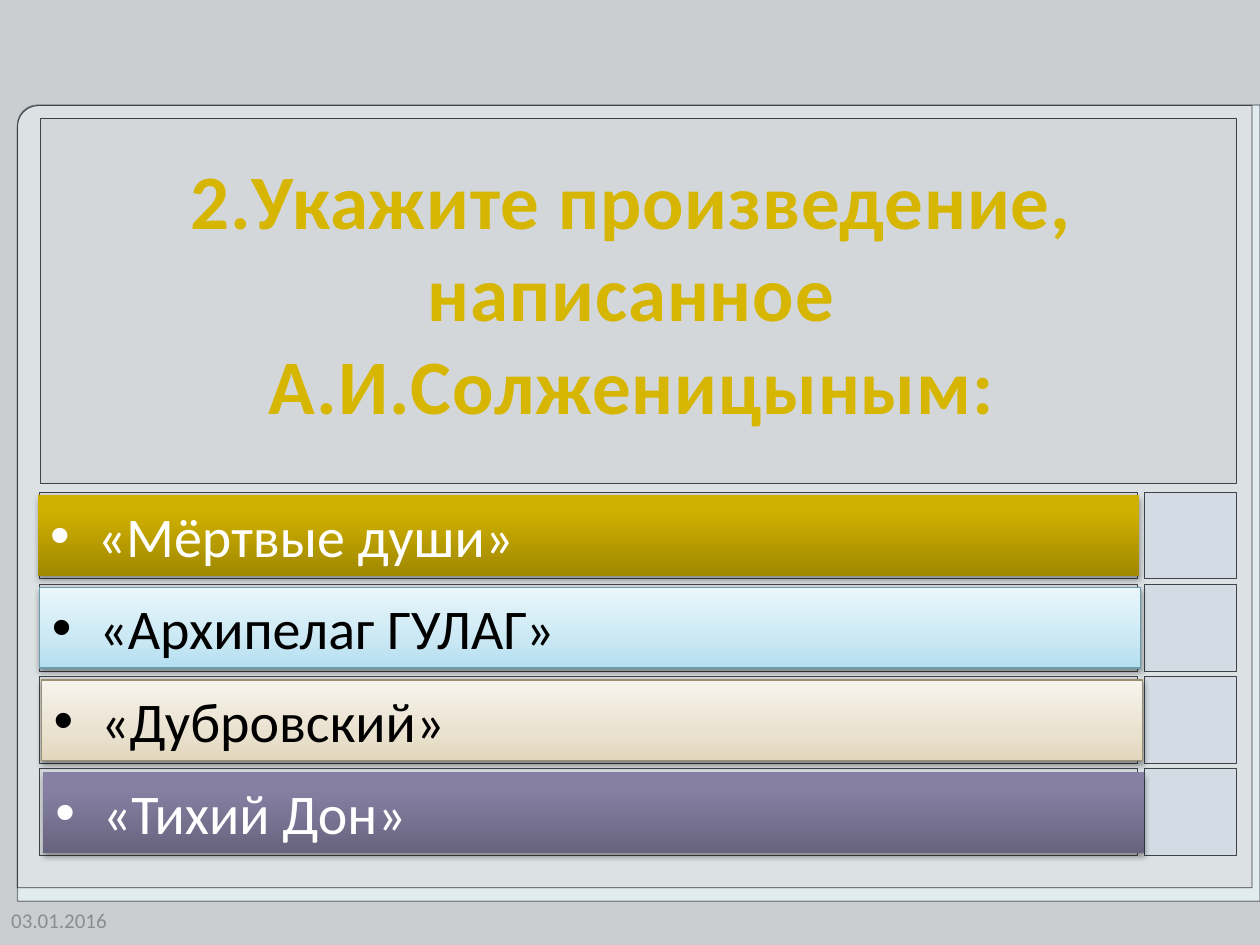
from lxml import etree
from pptx import Presentation
from pptx.dml.color import RGBColor
from pptx.enum import shapes, text
from pptx.oxml import ns
from pptx.util import Pt

COLORS = {
    "bg": "CBCED1", "frame": "E2ECEF", "frame_line": "7E848D",
    "panel": "D8D8D8", "line": "3F4247", "mark": "CCD8E7",
    "title": "D6B600", "date": "8C8C8C", "white": "FFFFFF", "black": "000000",
    "blue_line": "6A9DAE", "sand_line": "9C8F6F",
}
TITLE = "2.Укажите произведение, написанное А.И.Солженицыным:"
DATE = "03.01.2016"
GOLD = [(0, "A08800"), (80, "CFB000"), (100, "D0B100")]
BLUE = [(0, "B4DFF0"), (35, "CAE8F4"), (100, "EAF6FB")]
SAND = [(0, "E2D7BD"), (35, "EAE2D0"), (100, "F7F4ED")]
VIOLET = [(0, "67637D"), (80, "8681A3"), (100, "8681A4")]
ANSWERS = [
    ("«Мёртвые души»", GOLD, None, "white"),
    ("«Архипелаг ГУЛАГ»", BLUE, "blue_line", "black"),
    ("«Дубровский»", SAND, "sand_line", "black"),
    ("«Тихий Дон»", VIOLET, None, "white"),
]
ROW_TOP, ROW_STEP, ROW_HEIGHT = 281.2, 52.7, 49.6
BAR_LEFT, BAR_TOP, BAR_STEP = 21.6, 283, 52.8
BULLET_INDENT = 27


def rgb(name):
    return RGBColor.from_string(COLORS[name])


def add_child(parent, tag, **attrs):
    return etree.SubElement(parent, ns.qn(tag), attrs)


def add_box(slide, box, fill, line=None, width=0.5, alpha=None, radius=None):
    kind = shapes.MSO_SHAPE.RECTANGLE if radius is None else shapes.MSO_SHAPE.ROUND_1_RECTANGLE
    sp = slide.shapes.add_shape(kind, *map(Pt, box))
    sp.shadow.inherit = False
    if radius is not None:
        sp.adjustments[0] = radius
        sp._element.spPr.xfrm.set("flipH", "1")
    if isinstance(fill, list):
        set_gradient(sp, fill)
    else:
        sp.fill.solid()
        sp.fill.fore_color.rgb = rgb(fill)
        if alpha:
            color = sp._element.spPr.find(".//" + ns.qn("a:srgbClr"))
            add_child(color, "a:alpha", val=str(alpha * 1000))
    if line:
        sp.line.color.rgb = rgb(line)
        sp.line.width = Pt(width)
    else:
        sp.line.fill.background()
    return sp


def set_gradient(sp, stops):
    sp.fill.gradient()
    grad = sp._element.spPr.find(ns.qn("a:gradFill"))
    for child in list(grad):
        grad.remove(child)
    gs_list = add_child(grad, "a:gsLst")
    for pos, color in stops:
        gs = add_child(gs_list, "a:gs", pos=str(pos * 1000))
        add_child(gs, "a:srgbClr", val=color)
    add_child(grad, "a:lin", ang=str(270 * 60000), scaled="0")


def add_shadow(sp, alpha, distance):
    effects = sp._element.spPr.find(ns.qn("a:effectLst"))
    shadow = add_child(effects, "a:outerShdw", blurRad=str(Pt(3.1)),
                       dist=str(Pt(distance)), dir=str(90 * 60000), rotWithShape="0")
    color = add_child(shadow, "a:srgbClr", val=COLORS["black"])
    add_child(color, "a:alpha", val=str(alpha * 1000))


def set_text(sp, words, size, color, align, anchor, bold=False):
    tf = sp.text_frame
    tf.text = words
    tf.word_wrap = True
    tf.auto_size = text.MSO_AUTO_SIZE.NONE
    tf.vertical_anchor = anchor
    p = tf.paragraphs[0]
    p.alignment = align
    font = p.runs[0].font
    font.name, font.size, font.bold = "Calibri", Pt(size), bold
    font.color.rgb = rgb(color)
    return p


def add_answer(slide, i, words, stops, line, color):
    box = (BAR_LEFT + i, BAR_TOP + i * BAR_STEP, 629.3, 46)
    bar = add_box(slide, box, stops, line, 0.75)
    add_shadow(bar, *((38, 1.6) if line else (35, 1.8)))
    p = set_text(bar, words, 32, color, text.PP_ALIGN.LEFT, text.MSO_ANCHOR.TOP)
    props = p._p.get_or_add_pPr()
    props.set("marL", str(Pt(BULLET_INDENT)))
    props.set("indent", str(-Pt(BULLET_INDENT)))
    add_child(props, "a:buFont", typeface="Arial")
    add_child(props, "a:buChar", char="•")


def main():
    prs = Presentation()
    prs.slide_width, prs.slide_height = Pt(720), Pt(540)
    slide = prs.slides.add_slide(prs.slide_layouts[5])
    slide.background.fill.solid()
    slide.background.fill.fore_color.rgb = rgb("bg")

    add_box(slide, (10, 60, 710, 455), "frame", "frame_line", 0.75, radius=0.025)
    add_box(slide, (10, 60.3, 705.5, 447), "panel", "line", alpha=50, radius=0.027)
    add_box(slide, (23, 67.4, 683.5, 209), "bg", "line", alpha=50)
    for i in range(len(ANSWERS)):
        top = ROW_TOP + i * ROW_STEP
        add_box(slide, (22.7, top, 627.4, ROW_HEIGHT), "bg", "line", alpha=50)
        add_box(slide, (653.8, top, 52.7, ROW_HEIGHT), "mark", "line", alpha=50)

    date = slide.shapes.add_textbox(Pt(-0.7), Pt(511.2), Pt(84), Pt(28.8))
    set_text(date, DATE, 12, "date", text.PP_ALIGN.LEFT, text.MSO_ANCHOR.MIDDLE)
    for i, answer in enumerate(ANSWERS):
        add_answer(slide, i, *answer)

    title = slide.shapes.title
    title.left, title.top, title.width, title.height = map(Pt, (36, 83.5, 650, 167))
    p = set_text(title, TITLE, 44, "title", text.PP_ALIGN.CENTER, text.MSO_ANCHOR.TOP, True)
    p.runs[0].font._element.set("spc", "50")
    slide.shapes._spTree.append(title._element)

    prs.save("out.pptx")


if __name__ == "__main__":
    main()
